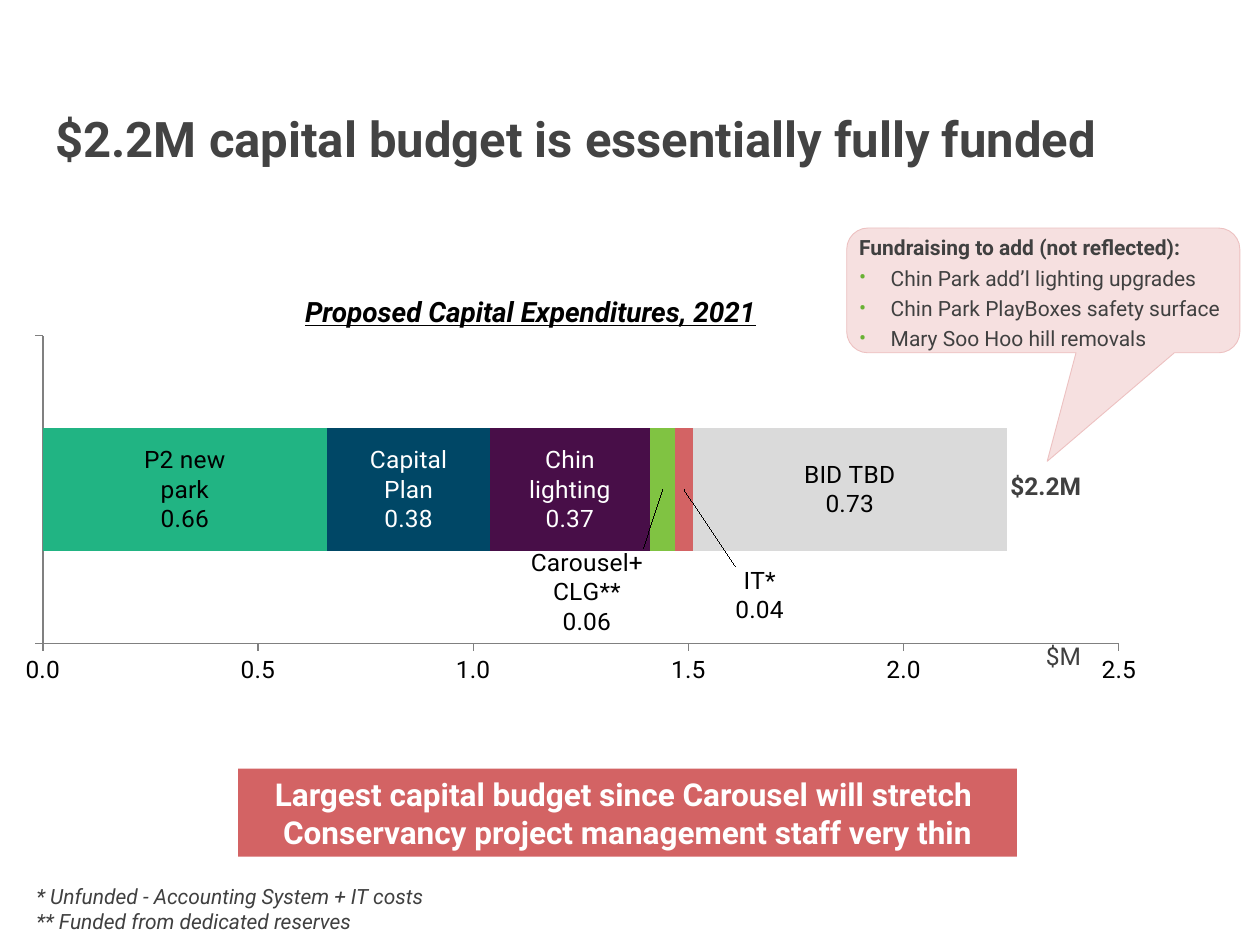
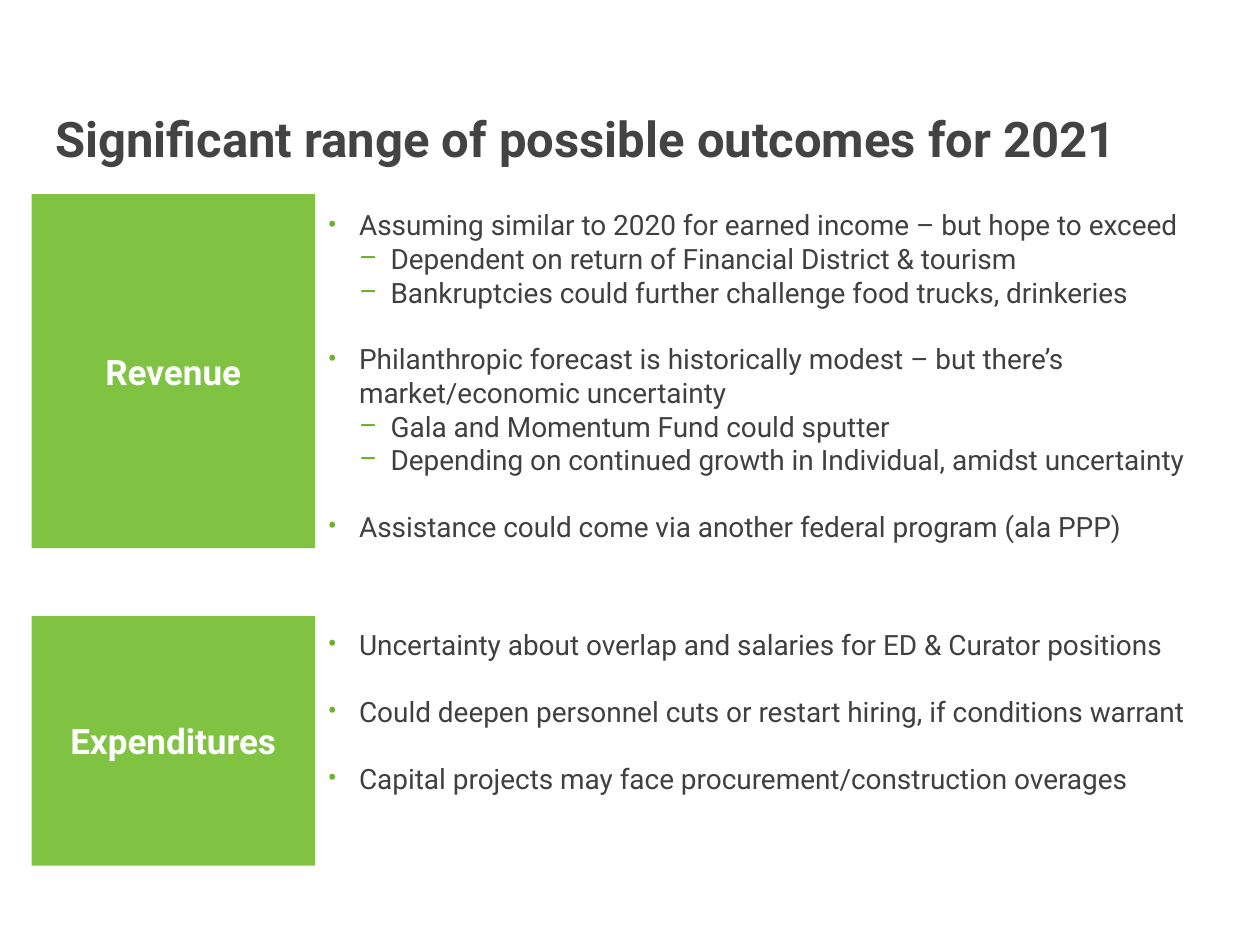
from copy import deepcopy
from dataclasses import dataclass

from lxml import etree
from pptx import Presentation
from pptx.chart.data import CategoryChartData
from pptx.dml.color import RGBColor
from pptx.enum.chart import XL_CHART_TYPE, XL_TICK_LABEL_POSITION, XL_TICK_MARK
from pptx.enum.shapes import MSO_SHAPE
from pptx.enum.text import MSO_ANCHOR, MSO_AUTO_SIZE, PP_ALIGN
from pptx.oxml import parse_xml
from pptx.oxml.ns import nsdecls, qn
from pptx.util import Pt

PX = 9144  # 100 px to the inch
LEFT, CENTER = PP_ALIGN.LEFT, PP_ALIGN.CENTER
TOP, MIDDLE, BOTTOM = MSO_ANCHOR.TOP, MSO_ANCHOR.MIDDLE, MSO_ANCHOR.BOTTOM
RECTANGLE, CALLOUT = MSO_SHAPE.RECTANGLE, MSO_SHAPE.ROUNDED_RECTANGULAR_CALLOUT
STACKED_BAR = XL_CHART_TYPE.BAR_STACKED
TICK_OUT, NO_LABELS = XL_TICK_MARK.OUTSIDE, XL_TICK_LABEL_POSITION.NONE


@dataclass(frozen=True)
class Theme:
    font: str = "Roboto"
    title: str = "434343"
    text: str = "404040"
    black: str = "000000"
    white: str = "FFFFFF"
    green: str = "80C342"
    bullet: str = "68B133"
    red: str = "D36364"
    teal: str = "21B483"
    navy: str = "004766"
    purple: str = "480E48"
    gray: str = "DADADA"
    axis: str = "808080"
    blush: str = "F6E0E0"
    blush_edge: str = "EDC1C1"
    title_size: int = 28
    panel_size: int = 20
    banner_size: int = 18
    body_size: int = 16
    label_size: int = 14
    note_size: int = 12


theme = Theme()
LIST_INDENT = 25
INDENT_STEPS = {"•": 1, "–": 2}


def write(shape, at, lines, size, color, bold=False, italic=False,
          align=LEFT, anchor=TOP, inset=(10, 5), gap=0, spacing=None):
    """Place a shape and fill it with lines, each a text or a (marker, text) pair."""
    shape.left, shape.top, shape.width, shape.height = (n * PX for n in at)
    frame = shape.text_frame
    frame.word_wrap = True
    frame.auto_size = MSO_AUTO_SIZE.NONE
    frame.vertical_anchor = anchor
    frame.margin_left = frame.margin_right = inset[0] * PX
    frame.margin_top = frame.margin_bottom = inset[1] * PX
    for index, line in enumerate(lines):
        marker, text = line if isinstance(line, tuple) else (None, line)
        para = frame.paragraphs[0] if index == 0 else frame.add_paragraph()
        para.text = text
        para.alignment = align
        para.space_before = Pt(gap if index and marker == "•" else 0)
        if spacing:
            para.line_spacing = spacing
        if marker:
            para.level = INDENT_STEPS[marker] - 1
            properties = para._p.get_or_add_pPr()
            properties.set("marL", str(INDENT_STEPS[marker] * LIST_INDENT * PX))
            properties.set("indent", str(-LIST_INDENT * PX))
            color_node = etree.SubElement(properties, qn("a:buClr"))
            etree.SubElement(color_node, qn("a:srgbClr"), val=theme.bullet)
            etree.SubElement(properties, qn("a:buFont"), typeface=theme.font)
            etree.SubElement(properties, qn("a:buChar"), char=marker)
        font = para.font
        font.name, font.size = theme.font, Pt(size)
        font.bold, font.italic = bold, italic
        font.color.rgb = RGBColor.from_string(color)
    return frame


def add_panel(page, kind, fill, edge=None):
    """Add a flat filled shape, to be placed by write."""
    panel = page.shapes.add_shape(kind, 0, 0, 0, 0)
    panel.shadow.inherit = False
    panel.fill.solid()
    panel.fill.fore_color.rgb = RGBColor.from_string(fill)
    if edge:
        panel.line.color.rgb = RGBColor.from_string(edge)
        panel.line.width = Pt(0.5)
    else:
        panel.line.fill.background()
    return panel


deck = Presentation()
deck.slide_width, deck.slide_height = 1000 * PX, 750 * PX

# Pages with the shared title style
budget_page = deck.slides.add_slide(deck.slide_layouts[5])
outlook_page = deck.slides.add_slide(deck.slide_layouts[3])
titles = (
    (budget_page, "$2.2M capital budget is essentially fully funded"),
    (outlook_page, "Significant range of possible outcomes for 2021"),
)
for page, title in titles:
    write(page.shapes.title, (34, 35, 932, 108), [title], theme.title_size,
          theme.title, bold=True, anchor=BOTTOM, inset=(10, 10))

# Budget page: unit and footnotes
write(budget_page.shapes.add_textbox(0, 0, 0, 0), (830, 509, 42, 24), ["$M"],
      theme.label_size, theme.text, inset=(0, 0))
write(budget_page.shapes.add_textbox(0, 0, 0, 0), (19, 696, 361, 50),
      ["* Unfunded - Accounting System + IT costs", "** Funded from dedicated reserves"],
      theme.note_size, theme.text, italic=True)

# Budget page: stacked bar; each label may be shifted by fractions of the chart
expenditures = (
    ("P2 new park", 0.66, theme.teal, theme.black, None),
    ("Capital Plan", 0.38, theme.navy, theme.white, None),
    ("Chin lighting", 0.37, theme.purple, theme.white, None),
    ("Carousel+CLG**", 0.06, theme.green, theme.black, (-0.06, 0.3)),
    ("IT*", 0.04, theme.red, theme.black, (0.06, 0.31)),
    ("BID TBD", 0.73, theme.gray, theme.black, None),
)
data = CategoryChartData()
data.categories = ["1"]
for name, value, *_ in expenditures:
    data.add_series(name, [value])
chart = budget_page.shapes.add_chart(
    STACKED_BAR, 0, 266 * PX, 1000 * PX, 278 * PX, data).chart
chart.has_legend = chart.has_title = False
chart.font.name, chart.font.size = theme.font, Pt(theme.label_size)
chart.font.color.rgb = RGBColor.from_string(theme.black)
plot = chart.plots[0]
plot.gap_width, plot.overlap, plot.vary_by_categories = 150, 100, False

for axis in (chart.category_axis, chart.value_axis):
    axis.has_major_gridlines = False
    axis.major_tick_mark = TICK_OUT
    axis.format.line.color.rgb = RGBColor.from_string(theme.axis)
chart.category_axis.tick_label_position = NO_LABELS
amounts = chart.value_axis
amounts.minimum_scale, amounts.maximum_scale, amounts.major_unit = 0, 2.5, 0.5
amounts.tick_labels.number_format = "#,##0.0"
amounts.tick_labels.number_format_is_linked = False

plot_area = chart._chartSpace.chart.plotArea
for old_layout in plot_area.findall(qn("c:layout")):
    plot_area.remove(old_layout)
plot_area.insert(0, parse_xml(
    f'<c:layout {nsdecls("c")}><c:manualLayout><c:layoutTarget val="inner"/>'
    '<c:xMode val="edge"/><c:yMode val="edge"/><c:x val="0.034"/><c:y val="0"/>'
    '<c:w val="0.854"/><c:h val="0.899"/></c:manualLayout></c:layout>'))

for series, (_, _, fill, label_color, shift) in zip(plot.series, expenditures):
    series.format.fill.solid()
    series.format.fill.fore_color.rgb = RGBColor.from_string(fill)
    labels = series.data_labels
    labels.show_value = labels.show_series_name = True
    labels.number_format, labels.number_format_is_linked = "#,##0.00", False
    labels.font.name, labels.font.size = theme.font, Pt(theme.label_size)
    labels.font.color.rgb = RGBColor.from_string(label_color)
    node = labels._element
    node.find(qn("c:txPr")).find(qn("a:bodyPr")).set("wrap", "square")
    separator = etree.Element(qn("c:separator"))
    separator.text = "\n"
    node.find(qn("c:showBubbleSize")).addnext(separator)
    if shift:
        settings = [deepcopy(child) for child in node
                    if child.tag != qn("c:showLeaderLines")]
        point_label = parse_xml(
            f'<c:dLbl {nsdecls("c")}><c:idx val="0"/><c:layout><c:manualLayout>'
            f'<c:x val="{shift[0]}"/><c:y val="{shift[1]}"/>'
            '</c:manualLayout></c:layout></c:dLbl>')
        point_label.extend(settings)
        node.insert(0, point_label)

# Budget page: total, takeaway and chart heading
write(budget_page.shapes.add_textbox(0, 0, 0, 0), (780, 374, 100, 24), ["$2.2M"],
      theme.label_size, theme.text, bold=True, align=CENTER, inset=(0, 0))
write(add_panel(budget_page, RECTANGLE, theme.red), (189, 610, 618, 70),
      ["Largest capital budget since Carousel will stretch ",
       "Conservancy project management staff very thin"],
      theme.banner_size, theme.white, bold=True, align=CENTER, anchor=MIDDLE)
heading = write(budget_page.shapes.add_textbox(0, 0, 0, 0), (213, 229, 416, 37),
                ["Proposed Capital Expenditures, 2021"], theme.body_size,
                theme.black, bold=True, italic=True, align=CENTER)
heading.paragraphs[0].font.underline = True

# Budget page: fundraising callout
callout = add_panel(budget_page, CALLOUT, theme.blush, theme.blush_edge)
for index, amount in enumerate((0.01, 1.37, 0.17)):
    callout.adjustments[index] = amount
fundraising = write(
    callout, (672, 181, 312, 99),
    ["Fundraising to add (not reflected):",
     ("•", "Chin Park add’l lighting upgrades"),
     ("•", "Chin Park PlayBoxes safety surface"),
     ("•", "Mary Soo Hoo hill removals")],
    theme.note_size, theme.text, anchor=MIDDLE, inset=(5, 5), spacing=1.2)
fundraising.paragraphs[0].font.bold = True

# Outlook page: a green panel beside each list
sections = (
    ("Revenue", (25, 154, 225, 281), (250, 155, 716, 279), [
        ("•", "Assuming similar to 2020 for earned income – but hope to exceed"),
        ("–", "Dependent on return of Financial District & tourism"),
        ("–", "Bankruptcies could further challenge food trucks, drinkeries"),
        ("•", "Philanthropic forecast is historically modest – but there’s "
              "market/economic uncertainty"),
        ("–", "Gala and Momentum Fund could sputter"),
        ("–", "Depending on continued growth in Individual, amidst uncertainty"),
        ("•", "Assistance could come via another federal program (ala PPP)"),
    ]),
    ("Expenditures", (25, 489, 225, 198), (250, 488, 716, 213), [
        ("•", "Uncertainty about overlap and salaries for ED & Curator positions"),
        ("•", "Could deepen personnel cuts or restart hiring, if conditions warrant"),
        ("•", "Capital projects may face procurement/construction overages"),
    ]),
)
for number, (topic, panel_at, list_at, points) in enumerate(sections, start=1):
    write(add_panel(outlook_page, RECTANGLE, theme.green), panel_at, [topic],
          theme.panel_size, theme.white, bold=True, align=CENTER, anchor=MIDDLE)
    write(outlook_page.placeholders[number], list_at, points, theme.body_size,
          theme.text, inset=(10, 10), gap=19)

deck.save("out.pptx")
